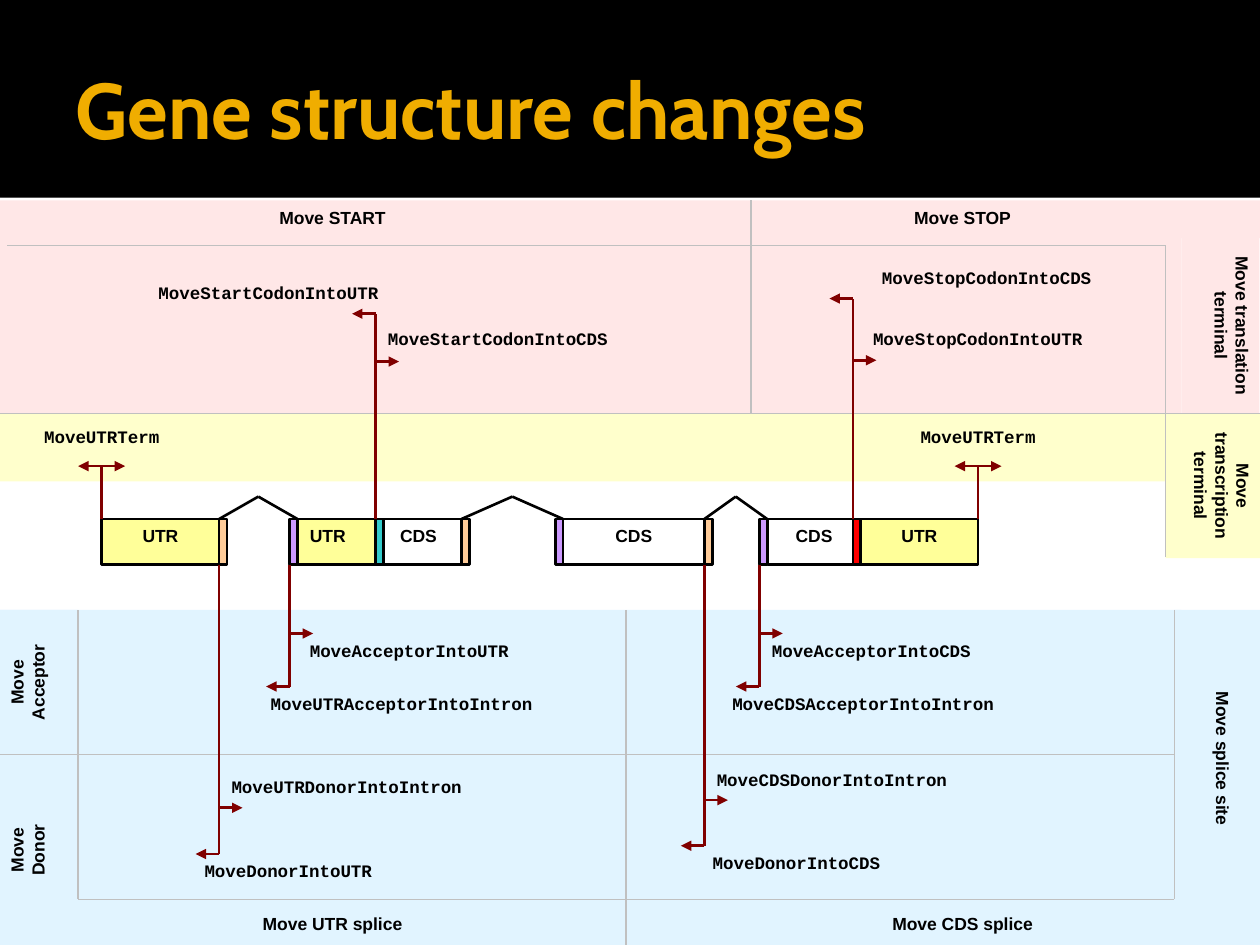
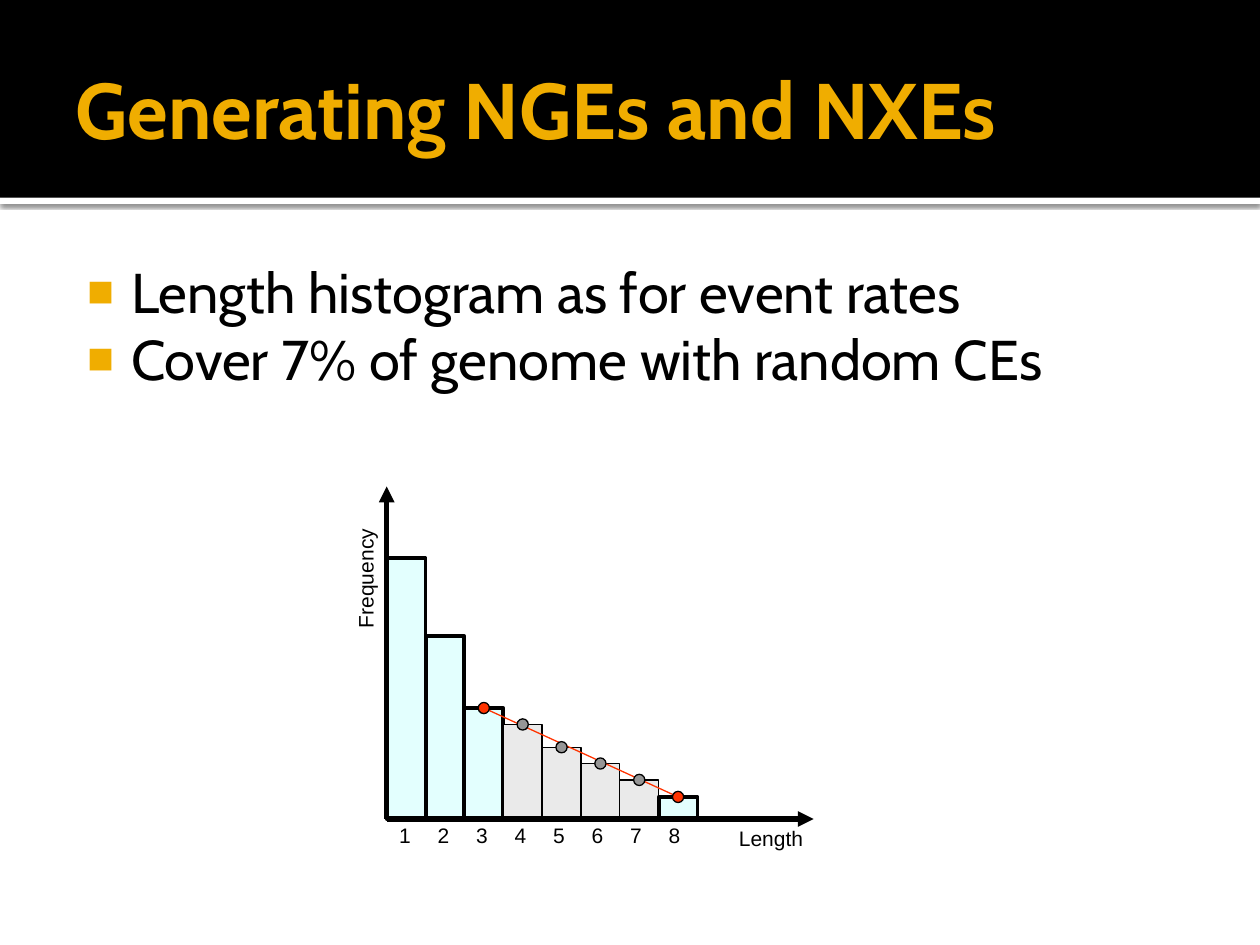
import dataclasses
import itertools
import typing

import lxml.etree
import pptx
import pptx.dml.color
import pptx.enum.shapes
import pptx.enum.text
import pptx.oxml.ns
import pptx.util

Pt = pptx.util.Pt
qn = pptx.oxml.ns.qn
Align = pptx.enum.text.PP_ALIGN
Preset = pptx.enum.shapes.MSO_SHAPE


@dataclasses.dataclass(frozen=True)
class Theme:
    black: str = "000000"
    white: str = "FFFFFF"
    gold: str = "F0AD00"
    translation: str = "FFE7E7"
    transcription: str = "FFFFCC"
    splicing: str = "E1F4FF"
    grid: str = "C0C0C0"
    move: str = "800000"
    utr: str = "FFFF99"
    start_codon: str = "33CCCC"
    stop_codon: str = "FF0000"
    acceptor: str = "CC99FF"
    donor: str = "FFCC99"
    observed: str = "E3FFFE"
    interpolated: str = "EAEAEA"
    trend: str = "FF3300"
    estimate: str = "969696"
    heading_font: str = "Cabin"
    label_font: str = "Arial"
    code_font: str = "Courier New"
    title_size: float = 45
    body_size: float = 32
    axis_size: float = 12
    label_size: float = 10


THEME = Theme()


class Box(typing.NamedTuple):
    left: float
    top: float
    width: float
    height: float


class Region(typing.NamedTuple):
    box: Box
    fill: str
    label: str = ""
    rotation: int = 0
    margins: dict = {}


class Exon(typing.NamedTuple):
    label: str
    left: float
    right: float
    fill: str
    align: Align = Align.CENTER


class Move(typing.NamedTuple):
    y: float
    direction: int
    label: str = ""
    box: Box = Box(0, 0, 0, 0)
    align: Align = Align.LEFT


class Stem(typing.NamedTuple):
    x: float
    edge: float
    moves: list[Move]


class Bar(typing.NamedTuple):
    height: float
    observed: bool


EXON_TOP, EXON_HEIGHT, SITE_WIDTH = 296.6, 26, 4.5
EXON_BOTTOM = EXON_TOP + EXON_HEIGHT
INTRON_PEAK = 283.8
ARROW_LENGTH = 13.4
GENE_START, GENE_END = 58.1, 558.9
DONOR_1, DONOR_2, DONOR_3 = 125.2, 263.7, 402.5
ACCEPTOR_1, ACCEPTOR_2, ACCEPTOR_3 = 165.5, 317.3, 433.9
START_CODON, STOP_CODON = 214.6, 487.4

REGIONS = [
    Region(Box(0, 348.5, 675, 170), THEME.splicing),
    Region(Box(0, 236.2, 720, 38.9), THEME.transcription),
    Region(Box(0, 136, 675, 100.2), THEME.translation),
    Region(Box(675, 136, 44.6, 100), THEME.translation, "Move translation terminal", 90),
    Region(Box(666, 236.2, 54, 82.8), THEME.transcription, "Move transcription terminal", 90,
           {"margin_left": Pt(2.2), "margin_right": Pt(2.2)}),
    Region(Box(671, 348.5, 49, 170), THEME.splicing, "Move splice site", 90, {"margin_top": Pt(15.1)}),
    Region(Box(0, 114.5, 380, 21.6), THEME.translation, "Move START"),
    Region(Box(380, 114.5, 340, 21.6), THEME.translation, "Move STOP"),
    Region(Box(0, 518.4, 380, 21.6), THEME.splicing, "Move UTR splice"),
    Region(Box(380, 518.4, 340, 21.6), THEME.splicing, "Move CDS splice"),
    Region(Box(0, 348.5, 44.6, 82.8), THEME.splicing, "Move Acceptor", 270),
    Region(Box(0, 431.3, 44.6, 108.7), THEME.splicing, "Move\nDonor", 270),
]

GRID_LINES = [
    (357.8, 348.5, 357.8, 540), (429.1, 114.5, 429.1, 236.2),
    (0, 431.3, 671, 431.3), (44.6, 348.5, 44.6, 514), (671, 348.5, 671, 514),
    (666, 140.4, 666, 318.2), (0, 236.2, 720, 236.2),
    (4.3, 140.4, 666, 140.4), (44.6, 514, 671, 514),
]

EXONS = [
    Exon("UTR", GENE_START, DONOR_1, THEME.utr),
    Exon("UTR", ACCEPTOR_1 + SITE_WIDTH, START_CODON, THEME.utr, Align.LEFT),
    Exon("CDS", START_CODON, DONOR_2, THEME.white),
    Exon("CDS", ACCEPTOR_2 + SITE_WIDTH, DONOR_3, THEME.white),
    Exon("CDS", ACCEPTOR_3 + SITE_WIDTH, STOP_CODON + SITE_WIDTH, THEME.white),
    Exon("UTR", STOP_CODON + SITE_WIDTH, GENE_END, THEME.utr),
]

INTRONS = [(DONOR_1, ACCEPTOR_1), (DONOR_2, ACCEPTOR_2), (DONOR_3, ACCEPTOR_3)]
CODONS = [(START_CODON, THEME.start_codon), (STOP_CODON, THEME.stop_codon)]


def terminal_moves(x: float) -> list[Move]:
    return [Move(266.4, 1, "MoveUTRTerm", Box(x - 53.7, 239.8, 107.4, 25), Align.CENTER), Move(266.4, -1)]


STEMS = [
    Stem(GENE_START, EXON_TOP, terminal_moves(GENE_START)),
    Stem(GENE_END, EXON_TOP, terminal_moves(GENE_END)),
    Stem(START_CODON, EXON_TOP, [
        Move(179.3, -1, "MoveStartCodonIntoUTR", Box(26.6, 157.7, 196.6, 26), Align.RIGHT),
        Move(206.6, 1, "MoveStartCodonIntoCDS", Box(214.6, 183.6, 196.6, 26))]),
    Stem(STOP_CODON, EXON_TOP, [
        Move(170.6, -1, "MoveStopCodonIntoCDS", Box(434, 149, 196.6, 26), Align.RIGHT),
        Move(205.9, 1, "MoveStopCodonIntoUTR", Box(491.8, 183.6, 170, 26))]),
    Stem(ACCEPTOR_1, EXON_BOTTOM, [
        Move(362, 1, "MoveAcceptorIntoUTR", Box(170, 362, 196.6, 26)),
        Move(392.3, -1, "MoveUTRAcceptorIntoIntron", Box(147.6, 392.3, 219.3, 26))]),
    Stem(ACCEPTOR_3, EXON_BOTTOM, [
        Move(362, 1, "MoveAcceptorIntoCDS", Box(434, 362, 196.6, 26)),
        Move(392.3, -1, "MoveCDSAcceptorIntoIntron", Box(411.4, 392.3, 219.3, 26))]),
    Stem(DONOR_1, EXON_BOTTOM, [
        Move(461.6, 1, "MoveUTRDonorIntoIntron", Box(125.2, 440, 183.6, 26)),
        Move(488, -1, "MoveDonorIntoUTR", Box(76.3, 488, 143.3, 26), Align.RIGHT)]),
    Stem(DONOR_3, EXON_BOTTOM, [
        Move(457.2, 1, "MoveCDSDonorIntoIntron", Box(402.5, 435.6, 183.6, 26)),
        Move(483.3, -1, "MoveDonorIntoCDS", Box(366.7, 483.3, 143.3, 26), Align.RIGHT)]),
]

ORIGIN_X, ORIGIN_Y, BAR_WIDTH, DOT = 221, 468, 22.2, 6.4
BARS = [Bar(149, True), Bar(104.4, True), Bar(63.4, True), Bar(54, False),
        Bar(41, False), Bar(31.7, False), Bar(22.3, False), Bar(12.6, True)]


def apply(target: typing.Any, values: dict) -> None:
    for name, value in values.items():
        setattr(target, name, value)


def rgb(code: str) -> pptx.dml.color.RGBColor:
    return pptx.dml.color.RGBColor.from_string(code)


def frame(box: Box, rotation: int = 0) -> list[int]:
    left, top, width, height = box
    if rotation % 180:
        left, top = left + (width - height) / 2, top + (height - width) / 2
        width, height = height, width
    return [Pt(length) for length in (left, top, width, height)]


def write(shape: typing.Any, words: str, font: str, size: float, color: str = THEME.black,
          bold: bool = False, align: Align = Align.LEFT,
          anchor: pptx.enum.text.MSO_ANCHOR = pptx.enum.text.MSO_ANCHOR.TOP,
          margins: dict | None = None) -> None:
    body = shape.text_frame
    body.text = words
    apply(body, {"word_wrap": True, "auto_size": pptx.enum.text.MSO_AUTO_SIZE.NONE,
                 "vertical_anchor": anchor, **(margins or {})})
    for paragraph in body.paragraphs:
        apply(paragraph, {"alignment": align, "space_before": Pt(0)})
        for run in paragraph.runs:
            apply(run.font, {"name": font, "size": Pt(size), "bold": bold})
            run.font.color.rgb = rgb(color)


def draw_shape(slide: typing.Any, box: Box, fill: str, outline: float = 0, rotation: int = 0,
               preset: Preset = Preset.RECTANGLE) -> typing.Any:
    shape = slide.shapes.add_shape(preset, *frame(box, rotation))
    shape.rotation = rotation
    shape.shadow.inherit = False
    shape.fill.solid()
    shape.fill.fore_color.rgb = rgb(fill)
    if outline:
        shape.line.color.rgb = rgb(THEME.black)
        shape.line.width = Pt(outline)
    else:
        shape.line.fill.background()
    return shape


def draw_text(slide: typing.Any, box: Box, words: str, font: str, size: float, rotation: int = 0,
              bold: bool = False, align: Align = Align.LEFT) -> typing.Any:
    label = slide.shapes.add_textbox(*frame(box, rotation))
    label.rotation = rotation
    write(label, words, font, size, bold=bold, align=align)
    return label


def draw_line(slide: typing.Any, ends: tuple, color: str, width: float, arrow: bool = False) -> typing.Any:
    line = slide.shapes.add_connector(pptx.enum.shapes.MSO_CONNECTOR.STRAIGHT, *map(Pt, ends))
    line.line.color.rgb = rgb(color)
    line.line.width = Pt(width)
    properties = line.element.spPr
    if arrow:
        lxml.etree.SubElement(properties.find(qn("a:ln")), qn("a:tailEnd"), type="triangle")
    lxml.etree.SubElement(properties, qn("a:effectLst"))
    return line


def start_slide(deck: typing.Any, layout: int, heading: str) -> typing.Any:
    slide = deck.slides.add_slide(deck.slide_layouts[layout])
    rule = draw_shape(slide, Box(0, 113, 720, 3.6), THEME.white)
    header = draw_shape(slide, Box(0, 0, 720, 113), THEME.black)
    shadow = lxml.etree.SubElement(rule.element.spPr.find(qn("a:effectLst")), qn("a:outerShdw"),
                                   blurRad=str(Pt(2.5)), dist=str(Pt(0.8)), dir="5400000",
                                   algn="tl", rotWithShape="0")
    tint = lxml.etree.SubElement(shadow, qn("a:srgbClr"), val=THEME.black)
    lxml.etree.SubElement(tint, qn("a:alpha"), val="60000")
    for depth, band in enumerate((rule, header), start=2):
        slide.shapes.element.insert(depth, band.element)
    title = slide.shapes.title
    apply(title, dict(zip(("left", "top", "width", "height"), frame(Box(36, 12.2, 648, 98.6)))))
    write(title, heading, THEME.heading_font, THEME.title_size, THEME.gold, bold=True,
          anchor=pptx.enum.text.MSO_ANCHOR.MIDDLE,
          margins={"margin_left": Pt(7.2), "margin_right": Pt(3.6)})
    return slide


def draw_stem(slide: typing.Any, stem: Stem) -> None:
    tip = max((move.y for move in stem.moves), key=lambda y: abs(y - stem.edge))
    draw_line(slide, (stem.x, stem.edge, stem.x, tip), THEME.move, 1.5)
    for move in stem.moves:
        reach = stem.x + move.direction * ARROW_LENGTH
        draw_line(slide, (stem.x, move.y, reach, move.y), THEME.move, 1.5, arrow=True)
        if move.label:
            draw_text(slide, move.box, move.label, THEME.code_font, THEME.label_size,
                      bold=True, align=move.align)


def build_gene_structure(deck: typing.Any) -> None:
    slide = start_slide(deck, 5, "Gene structure changes")
    for region in REGIONS:
        area = draw_shape(slide, region.box, region.fill, rotation=region.rotation)
        if region.label:
            write(area, region.label, THEME.label_font, THEME.label_size, bold=True,
                  align=Align.CENTER, margins=region.margins)
    for ends in GRID_LINES:
        draw_line(slide, ends, THEME.grid, 0.75)
    for exon in EXONS:
        block = draw_shape(slide, Box(exon.left, EXON_TOP, exon.right - exon.left, EXON_HEIGHT), exon.fill, 1.5)
        write(block, exon.label, THEME.label_font, THEME.label_size, bold=True, align=exon.align)
    sites = [((donor, THEME.donor), (acceptor, THEME.acceptor)) for donor, acceptor in INTRONS]
    for left, fill in itertools.chain(CODONS, *sites):
        draw_shape(slide, Box(left, EXON_TOP, SITE_WIDTH, EXON_HEIGHT), fill, 1.5)
    for donor, acceptor in INTRONS:
        exon_start = acceptor + SITE_WIDTH
        for foot in (donor, exon_start):
            draw_line(slide, (foot, EXON_TOP, (donor + exon_start) / 2, INTRON_PEAK), THEME.black, 1.5)
    for stem in STEMS:
        draw_stem(slide, stem)


def add_bullet(paragraph: typing.Any) -> None:
    properties = paragraph._p.get_or_add_pPr()
    apply_indent = {"marL": str(Pt(34.6)), "indent": str(Pt(-25.2))}
    properties.attrib.update(apply_indent)
    color = lxml.etree.SubElement(properties, qn("a:buClr"))
    lxml.etree.SubElement(color, qn("a:srgbClr"), val=THEME.gold)
    lxml.etree.SubElement(properties, qn("a:buSzPct"), val="80000")
    lxml.etree.SubElement(properties, qn("a:buFont"), typeface=THEME.label_font)
    lxml.etree.SubElement(properties, qn("a:buChar"), char="■")


def draw_histogram(slide: typing.Any) -> None:
    columns = []
    for index, bar in enumerate(BARS):
        box = Box(ORIGIN_X + index * BAR_WIDTH, ORIGIN_Y - bar.height, BAR_WIDTH, bar.height)
        fill, outline = (THEME.observed, 2.25) if bar.observed else (THEME.interpolated, 0.75)
        columns.append(draw_shape(slide, box, fill, outline))
    for tip in ((ORIGIN_X, 278), (465, ORIGIN_Y)):
        draw_line(slide, (ORIGIN_X, ORIGIN_Y, *tip), THEME.black, 3, arrow=True)
    trend = draw_line(slide, (0, 0, 0, 0), THEME.trend, 0.75)
    trend.begin_connect(columns[2], 0)
    trend.end_connect(columns[-1], 0)
    for index, bar in enumerate(BARS[2:], start=2):
        center = ORIGIN_X + (index + 0.5) * BAR_WIDTH
        box = Box(center - DOT / 2, ORIGIN_Y - bar.height - DOT / 2, DOT, DOT)
        draw_shape(slide, box, THEME.trend if bar.observed else THEME.estimate, 0.75, preset=Preset.OVAL)
    draw_text(slide, Box(198, 288, 21.6, 78), "Frequency", THEME.label_font, THEME.axis_size, 270)
    draw_text(slide, Box(407.5, 468, 66.2, 21.6), "Length", THEME.label_font, THEME.axis_size, align=Align.CENTER)
    lengths = "\t".join(str(number) for number in range(1, len(BARS) + 1))
    scale = draw_text(slide, Box(ORIGIN_X, 466.6, 320.4, 21.6), lengths, THEME.label_font, THEME.axis_size)
    stops = lxml.etree.SubElement(scale.text_frame.paragraphs[0]._p.get_or_add_pPr(), qn("a:tabLst"))
    for index in range(1, len(BARS)):
        lxml.etree.SubElement(stops, qn("a:tab"), pos=str(Pt(index * 22)), algn="l")


def build_length_histogram(deck: typing.Any) -> None:
    slide = start_slide(deck, 1, "Generating NGEs and NXEs")
    points = slide.placeholders[1]
    apply(points, dict(zip(("left", "top", "width", "height"), frame(Box(36, 139.7, 648, 364.3)))))
    write(points, "Length histogram as for event rates\nCover 7% of genome with random CEs",
          THEME.heading_font, THEME.body_size, margins={"margin_left": Pt(4.3), "margin_top": Pt(7.2)})
    for paragraph in points.text_frame.paragraphs:
        add_bullet(paragraph)
    draw_histogram(slide)


def main() -> None:
    deck = pptx.Presentation()
    apply(deck, {"slide_width": Pt(720), "slide_height": Pt(540)})
    build_gene_structure(deck)
    build_length_histogram(deck)
    deck.save("out.pptx")


if __name__ == "__main__":
    main()
